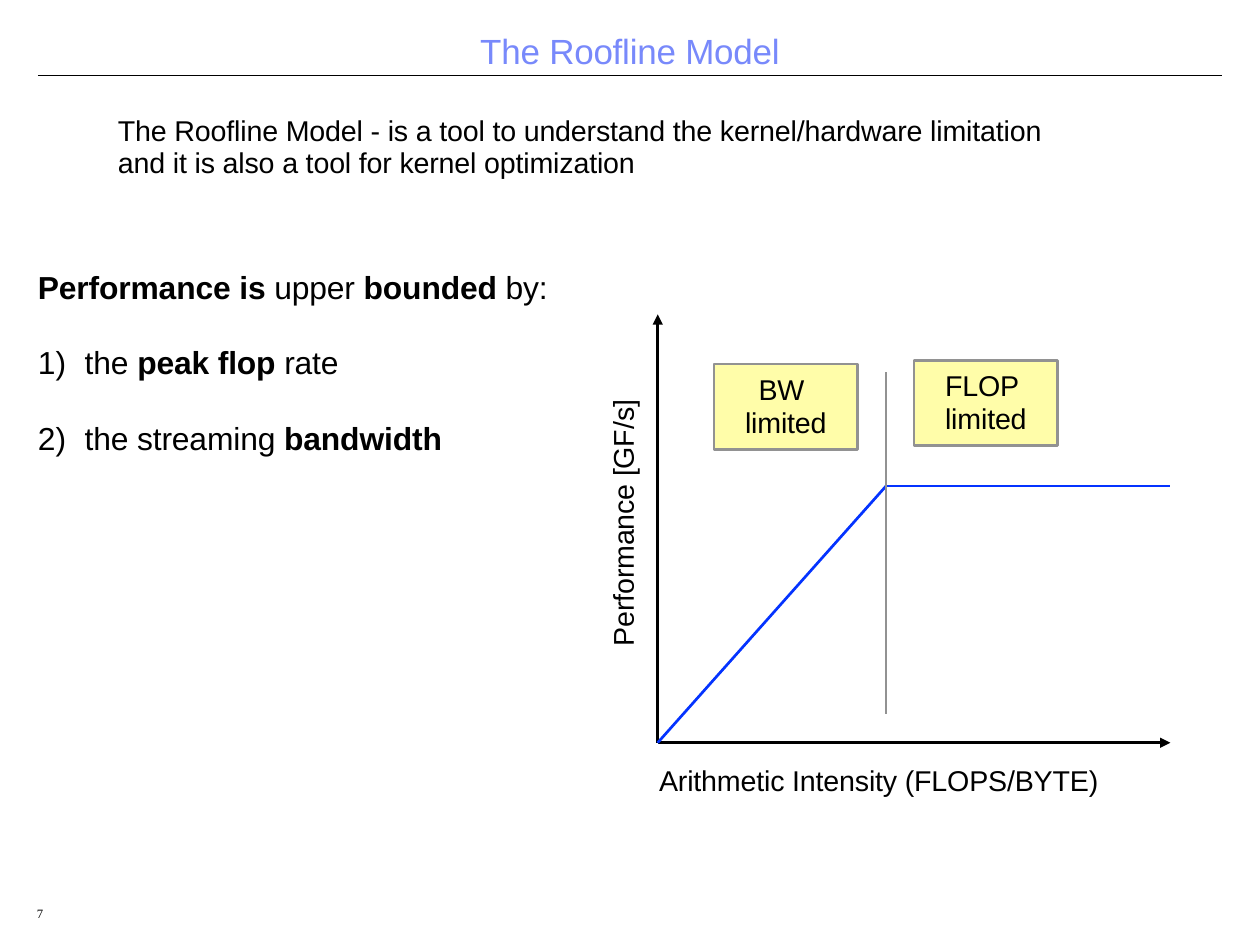
import lxml.etree
import pptx
import pptx.dml.color
import pptx.enum.shapes
import pptx.enum.text
import pptx.oxml.ns
import pptx.util
from pptx.util import Cm, Pt

BLACK = pptx.dml.color.RGBColor(0x00, 0x00, 0x00)
TITLE_BLUE = pptx.dml.color.RGBColor(0x78, 0x89, 0xFB)
ROOF_BLUE = pptx.dml.color.RGBColor(0x04, 0x33, 0xFF)
GREY = pptx.dml.color.RGBColor(0x92, 0x92, 0x92)
YELLOW = pptx.dml.color.RGBColor(0xFF, 0xFD, 0xA9)
qn = pptx.oxml.ns.qn


def write(frame, lines, size, color=BLACK, name="Arial", spacing=1.0):
    """Fill a frame without margins; text between asterisks becomes bold."""
    frame.word_wrap = True
    frame.auto_size = pptx.enum.text.MSO_AUTO_SIZE.NONE
    frame.vertical_anchor = pptx.enum.text.MSO_ANCHOR.TOP
    frame.margin_left = frame.margin_right = frame.margin_top = frame.margin_bottom = 0
    for number, line in enumerate(lines):
        para = frame.add_paragraph() if number else frame.paragraphs[0]
        para.line_spacing = spacing
        para.space_before = para.space_after = Pt(0)
        para.font.size = Pt(size)
        para.font.name = name
        para.font.color.rgb = color
        para._p.pPr.find(qn("a:defRPr")).set("spc", "-10")
        for position, part in enumerate(line.split("*")):
            if part:
                span = para.add_run()
                span.text = part
                span.font.bold = position % 2 == 1


def add_line(start, end, color, width, arrow=False):
    line = slide.shapes.add_connector(
        pptx.enum.shapes.MSO_CONNECTOR.STRAIGHT,
        Cm(start[0]), Cm(start[1]), Cm(end[0]), Cm(end[1]))
    line.line.color.rgb = color
    line.line.width = Pt(width)
    if arrow:
        lxml.etree.SubElement(line.line._get_or_add_ln(), qn("a:tailEnd"), type="triangle")
    lxml.etree.SubElement(line._element.spPr, qn("a:effectLst"))


deck = pptx.Presentation()
deck.slide_width, deck.slide_height = Cm(27.97), Cm(20.98)
slide = deck.slides.add_slide(deck.slide_layouts[1])

# Title and rule
title = slide.shapes.title
title.left, title.top, title.width, title.height = Cm(0.84), Cm(0.66), Cm(26.29), Cm(0.98)
write(title.text_frame, ["The Roofline Model"], 22, TITLE_BLUE)
title.text_frame.paragraphs[0].alignment = pptx.enum.text.PP_ALIGN.CENTER
add_line((0.84, 1.68), (27.13, 1.68), BLACK, 0.75)

# Bounds on performance
body = slide.placeholders[1]
body.left, body.top, body.width, body.height = Cm(0.84), Cm(5.95), Cm(12.2), Cm(4.4)
write(body.text_frame, ["*Performance is* upper *bounded* by:",
                        "the *peak flop* rate",
                        "the streaming *bandwidth*"], 20)
for number, para in enumerate(body.text_frame.paragraphs):
    para.space_after = Pt(23.3)
    properties = para._p.pPr
    hanging = Cm(1.04) if number else 0
    properties.set("marL", str(hanging))
    properties.set("indent", str(-hanging))
    bullet = properties.makeelement(qn("a:buAutoNum" if number else "a:buNone"))
    if number:
        bullet.set("type", "arabicParenR")
    properties.find(qn("a:defRPr")).addprevious(bullet)

# Introduction, axis labels and page number
labels = [
    ("The Roofline Model - is a tool to understand the kernel/hardware limitation "
     "and it is also a tool for kernel optimization",
     (2.62, 2.57, 21, 1.5), 18, "Arial", Pt(20), "horz"),
    ("Performance [GF/s]", (13.46, 8.74, 0.79, 5.61), 18, "Arial", Pt(20.9), "vert270"),
    ("Arithmetic Intensity (FLOPS/BYTE)", (14.63, 16.94, 11, 0.84), 18, "Arial", 1.0, "horz"),
    ("7", (0.82, 20.12, 0.43, 0.38), 8, "Times New Roman", 1.0, "horz"),
]
for text, place, size, name, spacing, direction in labels:
    box = slide.shapes.add_textbox(*map(Cm, place))
    write(box.text_frame, [text], size, name=name, spacing=spacing)
    box.text_frame._txBody.bodyPr.set("vert", direction)

# Roofline diagram
origin, knee = (14.6, 16.49), (19.67, 10.79)
right_end = 25.98
add_line(origin, (right_end, origin[1]), BLACK, 2.15, arrow=True)
add_line(origin, (origin[0], 6.98), BLACK, 2.15, arrow=True)
add_line(origin, knee, ROOF_BLUE, 1.7)
add_line(knee, (right_end, knee[1]), ROOF_BLUE, 1.7)
add_line((knee[0], 8.26), (knee[0], 15.86), GREY, 1.7)

# Regions: text, left, top, indent of the first line
for limit, left, top, indent in [("BW", 15.85, 8.08, 0.99), ("FLOP", 20.29, 8.0, 0.69)]:
    box = slide.shapes.add_shape(pptx.enum.shapes.MSO_SHAPE.RECTANGLE,
                                 Cm(left), Cm(top), Cm(3.18), Cm(1.9))
    box.shadow.inherit = False
    box.fill.solid()
    box.fill.fore_color.rgb = YELLOW
    box.line.color.rgb = GREY
    box.line.width = Pt(1.7)
    write(box.text_frame, [limit, "limited"], 18, spacing=Pt(20.8))
    box.text_frame.margin_top = Cm(0.2)
    for para, margin in zip(box.text_frame.paragraphs, (indent, 0.69)):
        para.alignment = pptx.enum.text.PP_ALIGN.LEFT
        para._p.pPr.set("marL", str(Cm(margin)))
    box.text_frame.paragraphs[0].space_before = Pt(5.5)

deck.save("out.pptx")
